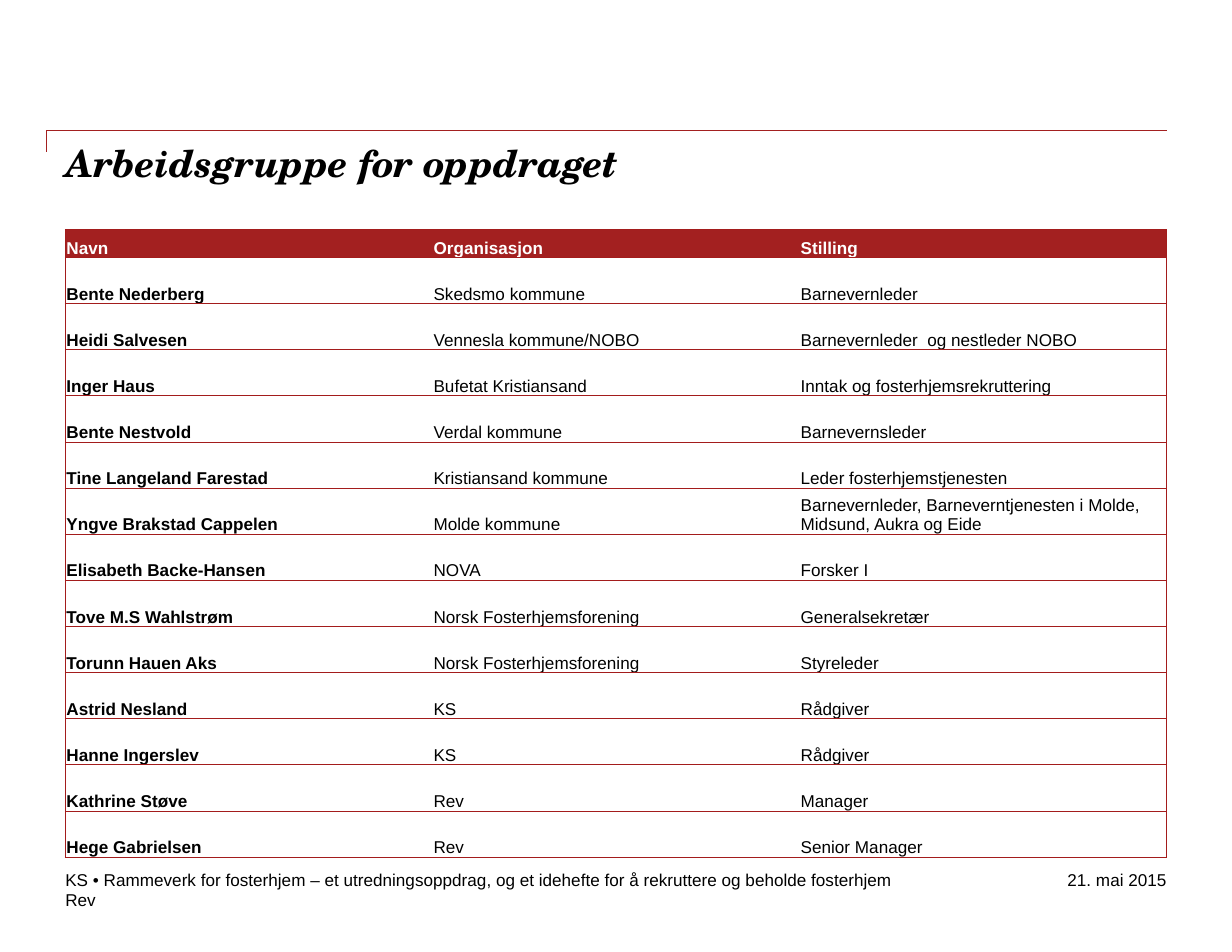
"""Build the slide that lists the working group for the assignment."""
from lxml.etree import SubElement
from pptx import Presentation
from pptx.dml.color import RGBColor
from pptx.enum.text import MSO_ANCHOR, PP_ALIGN
from pptx.oxml.ns import qn
from pptx.util import Pt

COLORS = {"black": "000000", "white": "FFFFFF", "red": "A32020", "border": "A31C1C"}
LEFT, WIDTH = 42, 708
HEADER_HEIGHT, ROW_HEIGHT = 18, 29.67
HEADINGS = ("Navn", "Organisasjon", "Stilling")
MEMBERS = (
    ("Bente Nederberg", "Skedsmo kommune", "Barnevernleder"),
    ("Heidi Salvesen", "Vennesla kommune/NOBO", "Barnevernleder  og nestleder NOBO"),
    ("Inger Haus", "Bufetat Kristiansand", "Inntak og fosterhjemsrekruttering"),
    ("Bente Nestvold", "Verdal kommune", "Barnevernsleder"),
    ("Tine Langeland Farestad", "Kristiansand kommune", "Leder fosterhjemstjenesten"),
    ("Yngve Brakstad Cappelen", "Molde kommune",
     "Barnevernleder, Barneverntjenesten i Molde, Midsund, Aukra og Eide"),
    ("Elisabeth Backe-Hansen", "NOVA", "Forsker I"),
    ("Tove M.S Wahlstrøm", "Norsk Fosterhjemsforening", "Generalsekretær"),
    ("Torunn Hauen Aks", "Norsk Fosterhjemsforening", "Styreleder"),
    ("Astrid Nesland", "KS", "Rådgiver"),
    ("Hanne Ingerslev", "KS", "Rådgiver"),
    ("Kathrine Støve", "Rev", "Manager"),
    ("Hege Gabrielsen", "Rev", "Senior Manager"),
)


def color(name):
    return RGBColor.from_string(COLORS[name])


def format_para(para, size=11, face="Arial", ink="black", bold=False, italic=False):
    for span in para.runs:
        font = span.font
        font.size, font.name = Pt(size), face
        font.bold, font.italic = bold, italic
        font.color.rgb = color(ink)


def clear_margins(frame):
    frame.margin_left = frame.margin_right = frame.margin_top = frame.margin_bottom = 0


def add_title(page, text):
    title = page.shapes.title
    title.left, title.top, title.width, title.height = Pt(LEFT), Pt(90), Pt(WIDTH), Pt(72)
    frame = title.text_frame
    frame.text = text
    frame.vertical_anchor = MSO_ANCHOR.TOP
    clear_margins(frame)
    para = frame.paragraphs[0]
    para.alignment = PP_ALIGN.LEFT
    format_para(para, 24, "TeX Gyre Schola", bold=True, italic=True)


def add_corner_rule(page):
    builder = page.shapes.build_freeform(Pt(30), Pt(97.6))
    builder.add_line_segments([(Pt(30), Pt(84)), (Pt(750), Pt(84))], close=False)
    rule = builder.convert_to_shape()
    rule.shadow.inherit = False
    rule.fill.background()
    rule.line.color.rgb = color("red")
    rule.line.width = Pt(1)


def add_label(page, text, left, top, width, align=PP_ALIGN.LEFT, wrap=False):
    box = page.shapes.add_textbox(Pt(left), Pt(top), Pt(width), Pt(13.5))
    frame = box.text_frame
    frame.text = text
    frame.word_wrap = wrap
    clear_margins(frame)
    para = frame.paragraphs[0]
    para.alignment = align
    format_para(para)


def set_borders(cell, sides):
    properties = cell._tc.get_or_add_tcPr()
    for side in "LRTB":
        line = SubElement(properties, qn(f"a:ln{side}"), w=str(Pt(0.75)))
        if side in sides:
            fill = SubElement(line, qn("a:solidFill"))
            SubElement(fill, qn("a:srgbClr"), val=COLORS["border"])
        else:
            SubElement(line, qn("a:noFill"))


def format_cell(cell, text, header, first, last):
    cell.text = text
    cell.vertical_anchor = MSO_ANCHOR.BOTTOM
    cell.margin_left = cell.margin_right = cell.margin_top = Pt(0.75)
    cell.margin_bottom = 0
    set_borders(cell, "TB" + "L" * first + "R" * last)
    if header:
        cell.fill.solid()
        cell.fill.fore_color.rgb = color("red")
    else:
        cell.fill.background()
    format_para(cell.text_frame.paragraphs[0], ink="white" if header else "black",
                bold=header or first)


def add_member_table(page):
    rows = (HEADINGS, *MEMBERS)
    count = len(HEADINGS)
    height = HEADER_HEIGHT + ROW_HEIGHT * len(MEMBERS)
    frame = page.shapes.add_table(len(rows), count, Pt(LEFT), Pt(147.6), Pt(WIDTH), Pt(height))
    table = frame.table
    for column in table.columns:
        column.width = Pt(WIDTH / count)
    for row_index, texts in enumerate(rows):
        header = row_index == 0
        table.rows[row_index].height = Pt(HEADER_HEIGHT if header else ROW_HEIGHT)
        for index, text in enumerate(texts):
            format_cell(table.cell(row_index, index), text, header,
                        index == 0, index == count - 1)


def main():
    deck = Presentation()
    deck.slide_width, deck.slide_height = Pt(792), Pt(612)
    page = deck.slides.add_slide(deck.slide_layouts[5])
    add_corner_rule(page)
    add_title(page, "Arbeidsgruppe for oppdraget")
    add_member_table(page)
    add_label(page, "KS • Rammeverk for fosterhjem – et utredningsoppdrag, og et idehefte "
              "for å rekruttere og beholde fosterhjem", LEFT, 558.7, 534)
    add_label(page, "Rev", LEFT, 572, 24)
    add_label(page, "21. mai 2015", 649, 558.7, 101, PP_ALIGN.RIGHT, wrap=True)
    deck.save("out.pptx")


if __name__ == "__main__":
    main()
